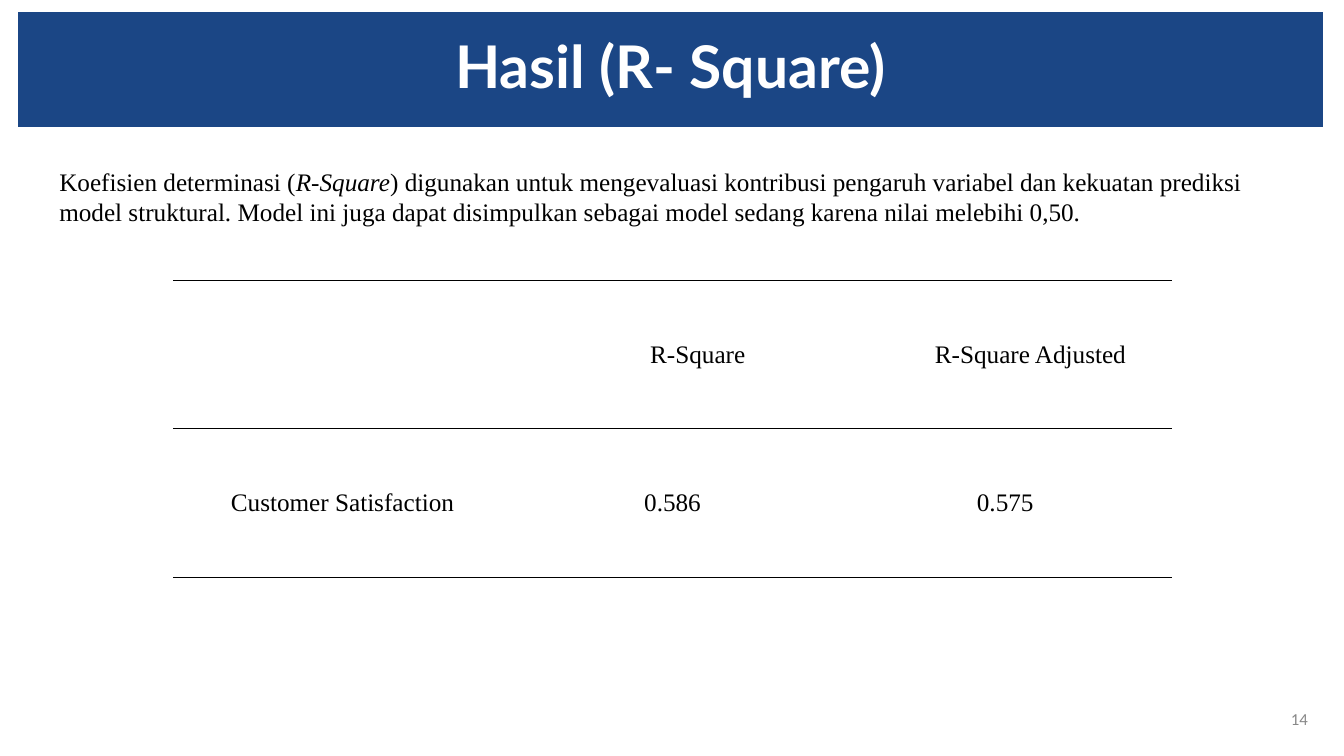
"""Build the R-Square results slide."""
from dataclasses import dataclass

from lxml import etree
from pptx import Presentation
from pptx import util as u
from pptx.dml.color import RGBColor
from pptx.enum import text
from pptx.oxml.ns import qn

PX = 9144


@dataclass(frozen=True)
class Theme:
    """Colours, fonts and type sizes of the slide."""
    banner: str = "1B4685"
    banner_ink: str = "FFFFFF"
    ink: str = "000000"
    muted: str = "888888"
    heading_font: str = "Lato"
    body_font: str = "Times New Roman"
    number_font: str = "Calibri"
    heading_size: int = 42
    body_size: int = 18
    number_size: int = 12
    rule_width: int = 1


THEME = Theme()


def px(*lengths):
    """Turn px lengths into EMU."""
    return [u.Emu(length * PX) for length in lengths]


def add_run(paragraph, words, font, size, color, bold=False, italic=False):
    """Append one formatted run."""
    run = paragraph.add_run()
    run.text = words
    run.font.name = font
    run.font.size = u.Pt(size)
    run.font.color.rgb = RGBColor.from_string(color)
    run.font.bold = bold
    run.font.italic = italic


def add_body_run(paragraph, words, italic=False):
    """Append a run in the body style."""
    add_run(paragraph, words, THEME.body_font, THEME.body_size, THEME.ink, italic=italic)


def fill_title(slide, words, box):
    """Place the title placeholder as a coloured banner."""
    title = slide.shapes.title
    title.left, title.top, title.width, title.height = px(*box)
    title.fill.solid()
    title.fill.fore_color.rgb = RGBColor.from_string(THEME.banner)
    frame = title.text_frame
    frame.auto_size = text.MSO_AUTO_SIZE.NONE
    frame.vertical_anchor = text.MSO_ANCHOR.MIDDLE
    heading = frame.paragraphs[0]
    heading.alignment = text.PP_ALIGN.CENTER
    heading.line_spacing = 0.9
    add_run(heading, words, THEME.heading_font, THEME.heading_size,
            THEME.banner_ink, bold=True)


def add_text(slide, box, anchor=text.MSO_ANCHOR.TOP):
    """Add a wrapping text box and return its paragraph."""
    frame = slide.shapes.add_textbox(*px(*box)).text_frame
    frame.word_wrap = True
    frame.vertical_anchor = anchor
    return frame.paragraphs[0]


def rule_cell(cell):
    """Draw horizontal rules only and leave the cell unfilled."""
    properties = cell._tc.get_or_add_tcPr()
    for side in "LRTB":
        line = etree.SubElement(properties, qn(f"a:ln{side}"))
        if side in "LR":
            etree.SubElement(line, qn("a:noFill"))
        else:
            line.set("w", str(u.Pt(THEME.rule_width)))
            solid = etree.SubElement(line, qn("a:solidFill"))
            etree.SubElement(solid, qn("a:srgbClr"), val=THEME.ink)
    cell.fill.background()


def fill_cell(cell, words, align, indent):
    """Write one table cell with its alignment and left indent."""
    rule_cell(cell)
    cell.vertical_anchor = text.MSO_ANCHOR.MIDDLE
    cell.margin_left, cell.margin_right = px(7, 7)
    cell.margin_top = cell.margin_bottom = 0
    if words:
        paragraph = cell.text_frame.paragraphs[0]
        paragraph.alignment = align
        paragraph._p.get_or_add_pPr().set("marL", str(indent * PX))
        add_body_run(paragraph, words)


def add_results(slide, rows, box):
    """Add the results table with equal rows and columns."""
    table = slide.shapes.add_table(len(rows), len(rows[0]), *px(*box)).table
    table.first_row = table.horz_banding = False
    for r, values in enumerate(rows):
        for c, words in enumerate(values):
            is_label = r == 0 or c == 0
            align = text.PP_ALIGN.CENTER if c else text.PP_ALIGN.LEFT
            fill_cell(table.cell(r, c), words, align, 50 if is_label else 0)


def main():
    """Build and save the slide."""
    deck = Presentation()
    deck.slide_width, deck.slide_height = px(1333, 750)
    slide = deck.slides.add_slide(deck.slide_layouts[5])

    number = add_text(slide, (1250, 693, 57, 40), text.MSO_ANCHOR.MIDDLE)
    number.alignment = text.PP_ALIGN.RIGHT
    add_run(number, "14", THEME.number_font, THEME.number_size, THEME.muted)

    fill_title(slide, "Hasil (R- Square)", (18, 12, 1294, 114))
    add_results(slide, [
        ("", "R-Square", "R-Square Adjusted"),
        ("Customer Satisfaction", "0.586", "0.575"),
    ], (172, 278, 990, 295))

    summary = add_text(slide, (49, 160, 1240, 71))
    add_body_run(summary, "Koefisien determinasi (")
    add_body_run(summary, "R-Square", italic=True)
    add_body_run(summary, ") digunakan untuk mengevaluasi kontribusi pengaruh variabel "
                 "dan kekuatan prediksi model struktural. Model ini juga dapat "
                 "disimpulkan sebagai model sedang karena nilai melebihi 0,50.")
    deck.save("out.pptx")


if __name__ == "__main__":
    main()
